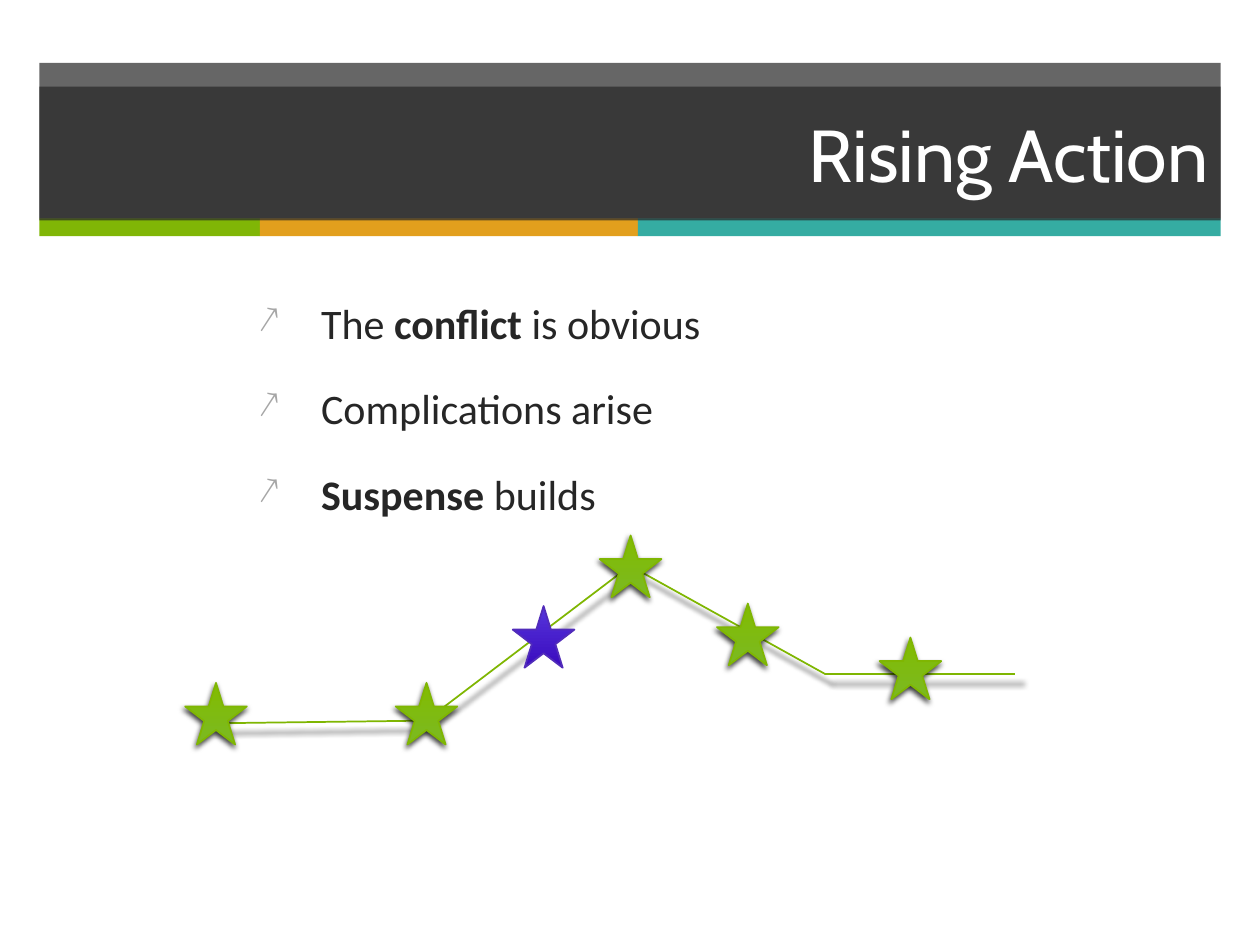
from dataclasses import dataclass

from lxml.etree import SubElement
from pptx import Presentation
from pptx.dml.color import RGBColor
from pptx.enum.shapes import MSO_CONNECTOR, MSO_SHAPE
from pptx.enum.text import MSO_ANCHOR, PP_ALIGN
from pptx.oxml.ns import qn
from pptx.util import Pt


@dataclass(frozen=True)
class Theme:
    dark: str = "262626"
    white: str = "FFFFFF"
    mark: str = "A6A6A6"
    shade: str = "000000"
    edge: str = "7FB602"
    green: tuple = ("7BB922", "82BC00")
    blue: tuple = ("3A0BBE", "5635DB")
    blue_edge: str = "512CBA"
    strip: tuple = ("80B606", "E29F1D", "35ACA2")
    head_font: str = "Cabin"
    body_font: str = "Calibri"
    head_size: int = 42
    body_size: int = 24


THEME = Theme()
LEFT, WIDE = 22.5, 675
STAR = 35.3


def rgb(code):
    return RGBColor.from_string(code)


def add_shade(shape):
    """Give the shape a soft shadow, slightly larger than itself."""
    props = shape._element.spPr
    for old in props.findall(qn("a:effectLst")):
        props.remove(old)
    effect = SubElement(props, qn("a:effectLst"))
    outer = SubElement(effect, qn("a:outerShdw"), blurRad=str(Pt(3)),
                       dist=str(Pt(2)), dir="6600000", sx="101000",
                       sy="101000", rotWithShape="0")
    color = SubElement(outer, qn("a:srgbClr"), val=THEME.shade)
    SubElement(color, qn("a:alpha"), val="75000")


def add_bar(slide, x, y, w, h, color, alpha=None):
    bar = slide.shapes.add_shape(MSO_SHAPE.RECTANGLE, Pt(x), Pt(y), Pt(w), Pt(h))
    bar.shadow.inherit = False
    bar.line.fill.background()
    bar.fill.solid()
    bar.fill.fore_color.rgb = rgb(color)
    if alpha:
        code = bar._element.spPr.find(".//" + qn("a:srgbClr"))
        SubElement(code, qn("a:alpha"), val=str(alpha * 1000))
    return bar


def add_text(para, text, *, font, size, color, bold=False):
    run = para.add_run()
    run.text = text
    run.font.name = font
    run.font.size = Pt(size)
    run.font.color.rgb = rgb(color)
    run.font.bold = bold


def add_mark(para):
    """Set the arrow bullet and its hanging indent."""
    props = para._p.get_or_add_pPr()
    props.set("marL", str(Pt(36)))
    props.set("indent", str(-Pt(36)))
    color = SubElement(props, qn("a:buClr"))
    SubElement(color, qn("a:srgbClr"), val=THEME.mark)
    SubElement(props, qn("a:buSzPct"), val="90000")
    SubElement(props, qn("a:buChar"), char="↗")


def add_head(slide, text):
    add_bar(slide, LEFT, 36, WIDE, 89, THEME.dark, 70)
    x = LEFT
    for w, color in zip((126, 216, 333), THEME.strip):
        add_bar(slide, x, 124.8, w, 10.2, color)
        x += w
    frame = add_bar(slide, LEFT, 49.5, WIDE, 76.5, THEME.dark, 70).text_frame
    frame.word_wrap = True
    frame.vertical_anchor = MSO_ANCHOR.MIDDLE
    para = frame.paragraphs[0]
    para.alignment = PP_ALIGN.RIGHT
    add_text(para, text, font=THEME.head_font, size=THEME.head_size,
             color=THEME.white)


def add_list(slide, items):
    """Each item is a list of (text, bold) runs."""
    box = slide.shapes.add_textbox(Pt(140.4), Pt(166.3), Pt(557.1), Pt(314.6))
    frame = box.text_frame
    frame.word_wrap = True
    for i, item in enumerate(items):
        para = frame.add_paragraph() if i else frame.paragraphs[0]
        para.space_before = Pt(20)
        add_mark(para)
        for text, bold in item:
            add_text(para, text, font=THEME.body_font, size=THEME.body_size,
                     color=THEME.dark, bold=bold)


def add_line(slide, start, end):
    line = slide.shapes.add_connector(
        MSO_CONNECTOR.STRAIGHT, *(Pt(v) for v in (*start, *end)))
    line.line.color.rgb = rgb(THEME.edge)
    line.line.width = Pt(1)
    add_shade(line)


def add_star(slide, x, y, fill, edge, shade=True):
    star = slide.shapes.add_shape(MSO_SHAPE.STAR_5_POINT, Pt(x), Pt(y),
                                  Pt(STAR), Pt(STAR))
    star.shadow.inherit = False
    star.fill.gradient()
    star.fill.gradient_angle = 90
    for stop, color in zip(star.fill.gradient_stops, fill):
        stop.color.rgb = rgb(color)
    star.line.color.rgb = rgb(edge)
    star.line.width = Pt(1)
    if shade:
        add_shade(star)


def main():
    deck = Presentation()
    deck.slide_width, deck.slide_height = Pt(720), Pt(540)
    slide = deck.slides.add_slide(deck.slide_layouts[6])

    add_head(slide, "Rising Action")
    add_list(slide, [
        [("The ", False), ("conflict ", True), ("is obvious", False)],
        [("Complications arise", False)],
        [("Suspense ", True), ("builds", False)],
    ])

    plot = [(123.1, 413.3), (243.4, 411.8), (360, 323.3), (471.6, 385.2),
            (580.3, 385.2)]
    for start, end in zip(plot, plot[1:]):
        add_line(slide, start, end)

    add_star(slide, 293, 346.3, THEME.blue, THEME.blue_edge, shade=False)
    for x, y in [(105.8, 390.2), (226.1, 390.2), (409.7, 344.9),
                 (502.6, 364.3), (342.7, 306)]:
        add_star(slide, x, y, THEME.green, THEME.edge)

    deck.save("out.pptx")


if __name__ == "__main__":
    main()
